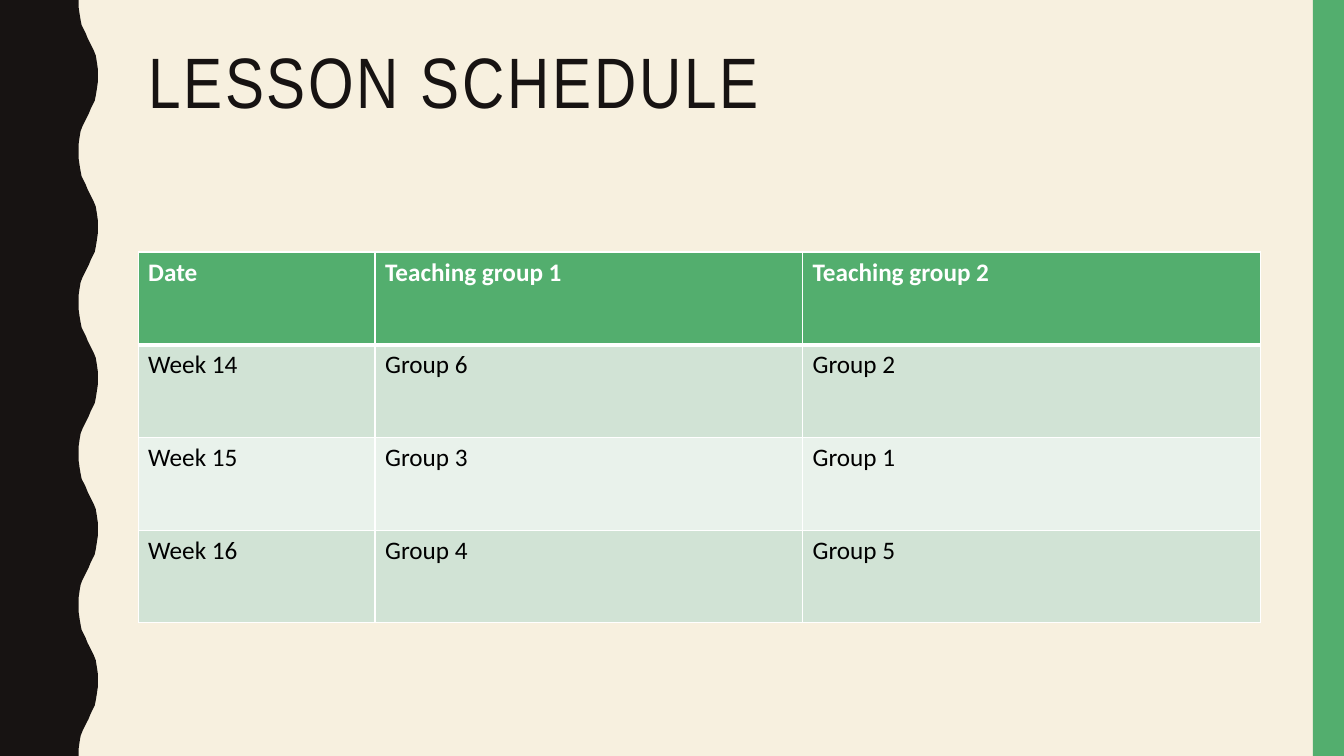
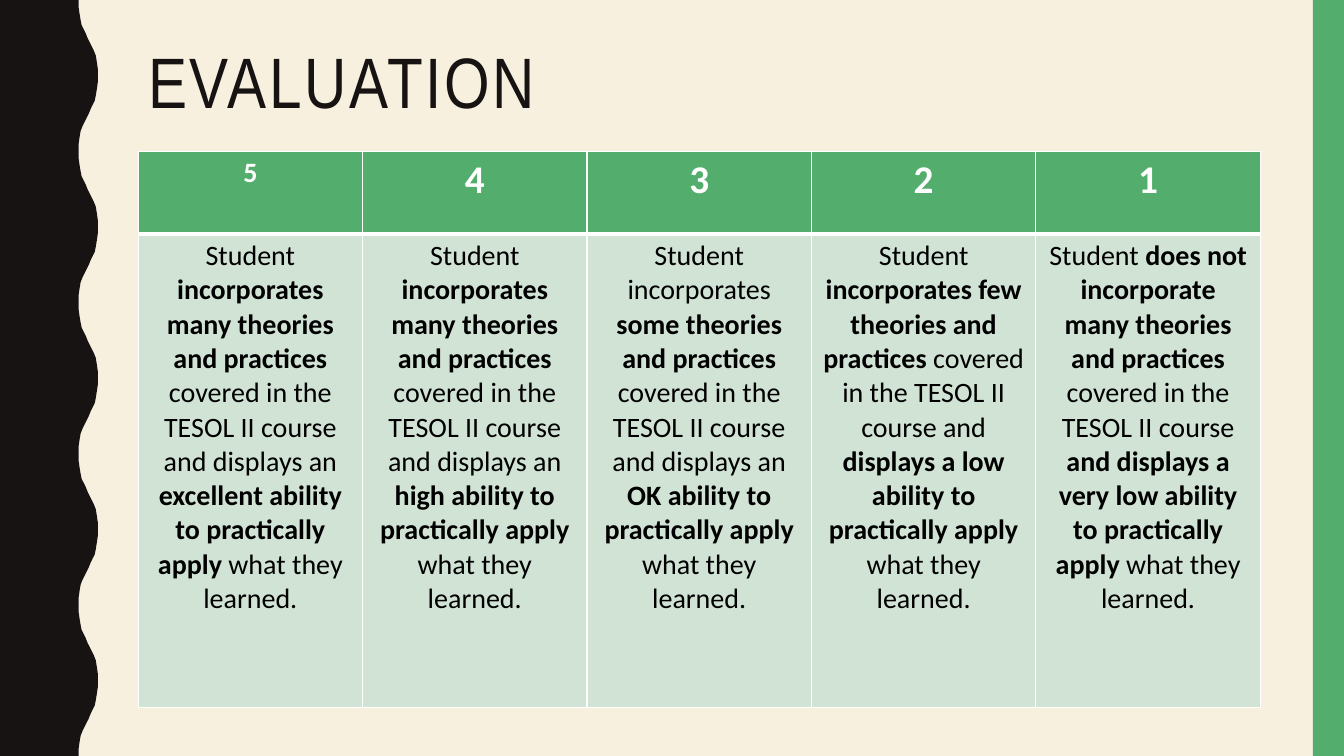
import lxml.etree
import pptx
import pptx.dml.color
import pptx.enum.shapes
import pptx.enum.text
import pptx.oxml.ns
import pptx.util

Inches = pptx.util.Inches
Pt = pptx.util.Pt
qn = pptx.oxml.ns.qn
ALIGN = pptx.enum.text.PP_ALIGN

# One half wave of the left band: sideways offset and height at each step.
WAVE_OFFSETS = [0, 0, 0.01, 0.02, 0.03, 0.05, 0.07, 0.09, 0.11, 0.13, 0.15, 0.17, 0.18, 0.19]
WAVE_HEIGHTS = [0, 0.07, 0.14, 0.2, 0.25, 0.29, 0.33, 0.38, 0.42, 0.46, 0.5, 0.55, 0.61, 0.68]
HALF_WAVE = 0.75
WAVE_LEFT, WAVE_RIGHT = 0.78, 0.97

SCHEDULE = [
    ["Date", "Teaching group 1", "Teaching group 2"],
    ["Week 14", "Group 6", "Group 2"],
    ["Week 15", "Group 3", "Group 1"],
    ["Week 16", "Group 4", "Group 5"],
]

# Asterisks enclose bold words.
EVALUATION = [
    ["5", "4", "3", "2", "1"],
    [
        "Student *incorporates many theories and practices *covered in the TESOL II course "
        "and displays an *excellent ability to practically apply *what they learned.",
        "Student *incorporates many theories and practices *covered in the TESOL II course "
        "and displays an *high ability to practically apply *what they learned.",
        "Student incorporates *some theories and practices *covered in the TESOL II course "
        "and displays an *OK ability to practically apply *what they learned.",
        "Student *incorporates few theories and practices* covered in the TESOL II course "
        "and *displays a low ability to practically apply *what they learned.",
        "Student *does not incorporate many theories and practices* covered in the TESOL II "
        "course *and displays a very low ability to practically apply *what they learned.",
    ],
]


def color(value):
    return pptx.dml.color.RGBColor.from_string(value)


def set_format(target, values):
    for name, value in values.items():
        setattr(target, name, value)


class Deck:
    """Holds the shared style and the slide being filled."""

    WIDTH, HEIGHT = 13.33, 7.5
    LEFT, CONTENT_WIDTH = 1.37, 11.13
    BACKGROUND, DARK, GREEN = "F7F0DF", "171312", "53AE6E"
    WHITE, BLACK = "FFFFFF", "000000"
    BANDS = ["D1E3D5", "E9F2EB"]
    TITLE_FONT = {"name": "Arial Narrow", "size": Pt(51)}
    BODY_FONT = "Calibri"

    def __init__(self):
        self.presentation = pptx.Presentation()
        self.presentation.slide_width = Inches(self.WIDTH)
        self.presentation.slide_height = Inches(self.HEIGHT)
        self.fill(self.presentation.slide_master.background, self.BACKGROUND)
        self.slide = None

    def fill(self, target, value):
        target.fill.solid()
        target.fill.fore_color.rgb = color(value)

    def finish_shape(self, shape, value):
        self.fill(shape, value)
        shape.line.fill.background()
        shape.shadow.inherit = False

    def add_slide(self, title):
        self.slide = self.presentation.slides.add_slide(self.presentation.slide_layouts[6])
        self.add_wave()
        self.add_side_band()
        self.add_title(title)

    def add_wave(self):
        points = [(0, 0)]
        for half in range(round(self.HEIGHT / HALF_WAVE)):
            for offset, height in zip(WAVE_OFFSETS, WAVE_HEIGHTS):
                x = WAVE_RIGHT - offset if half % 2 else WAVE_LEFT + offset
                points.append((x, half * HALF_WAVE + height))
        points += [(WAVE_LEFT, self.HEIGHT), (0, self.HEIGHT)]
        corners = [(Inches(x), Inches(y)) for x, y in points]
        builder = self.slide.shapes.build_freeform(*corners[0])
        builder.add_line_segments(corners[1:], close=True)
        self.finish_shape(builder.convert_to_shape(), self.DARK)

    def add_side_band(self):
        band = self.slide.shapes.add_shape(
            pptx.enum.shapes.MSO_SHAPE.RECTANGLE,
            Inches(13.02), Inches(0), Inches(0.31), Inches(self.HEIGHT))
        self.finish_shape(band, self.GREEN)

    def add_title(self, text):
        box = self.slide.shapes.add_textbox(
            Inches(self.LEFT), Inches(0.42), Inches(self.CONTENT_WIDTH), Inches(1.63))
        box.text_frame.word_wrap = True
        paragraph = box.text_frame.paragraphs[0]
        paragraph.line_spacing = 0.9
        run = paragraph.add_run()
        run.text = text
        set_format(run.font, self.TITLE_FONT)
        run.font.color.rgb = color(self.DARK)
        run.font._element.set("spc", "200")

    def add_table(self, rows, top, widths, heights, sizes, align=ALIGN.LEFT):
        """Add a table with a green header; sizes holds the text size of each cell by row."""
        table = self.slide.shapes.add_table(
            len(rows), len(widths), Inches(self.LEFT), Inches(top),
            Inches(sum(widths)), Inches(sum(heights))).table
        for column, width in zip(table.columns, widths):
            column.width = Inches(width)
        for index, height in enumerate(heights):
            table.rows[index].height = Inches(height)
            for position, text in enumerate(rows[index]):
                cell = table.cell(index, position)
                self.add_borders(cell, index)
                self.fill(cell, self.BANDS[(index - 1) % 2] if index else self.GREEN)
                self.write_cell(cell, text, sizes[index][position], align, index == 0)

    def add_borders(self, cell, row):
        """Draw white cell borders, thicker between the header and the body."""
        properties = cell._tc.get_or_add_tcPr()
        widths = {"L": 1, "R": 1, "T": 3 if row == 1 else 1, "B": 3 if row == 0 else 1}
        for side, width in widths.items():
            line = lxml.etree.SubElement(properties, qn("a:ln" + side), w=str(Pt(width)))
            solid = lxml.etree.SubElement(line, qn("a:solidFill"))
            lxml.etree.SubElement(solid, qn("a:srgbClr"), val=self.WHITE)

    def write_cell(self, cell, text, size, align, header):
        paragraph = cell.text_frame.paragraphs[0]
        paragraph.alignment = align
        for index, part in enumerate(text.split("*")):
            run = paragraph.add_run()
            run.text = part
            set_format(run.font, {"name": self.BODY_FONT, "size": Pt(size),
                                  "bold": header or index % 2 == 1})
            run.font.color.rgb = color(self.WHITE if header else self.BLACK)


def main():
    deck = Deck()
    deck.add_slide("LESSON SCHEDULE")
    deck.add_table(SCHEDULE, 2.5, [2.35, 4.24, 4.54], [0.92] * 4, [[18] * 3] * 4)
    deck.add_slide("EVALUATION")
    deck.add_table(EVALUATION, 1.5, [deck.CONTENT_WIDTH / 5] * 5, [0.82, 4.7],
                   [[20] + [28] * 4, [20] * 5], ALIGN.CENTER)
    deck.presentation.save("out.pptx")


if __name__ == "__main__":
    main()
